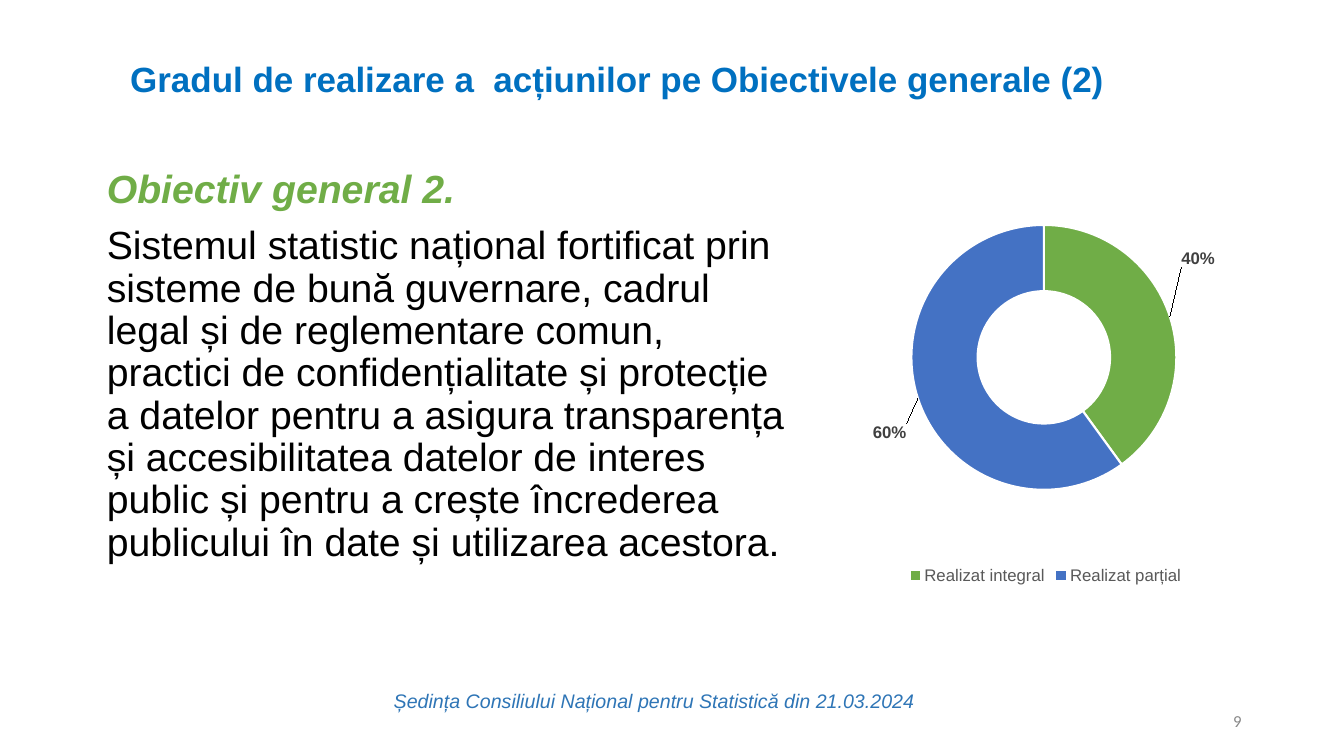
from lxml.etree import SubElement
from pptx import Presentation
from pptx.chart.data import CategoryChartData
from pptx.dml.color import RGBColor
from pptx.enum.chart import XL_CHART_TYPE as ChartType, XL_LEGEND_POSITION as LegendPosition
from pptx.enum.text import MSO_ANCHOR as Anchor, MSO_AUTO_SIZE as AutoSize, PP_ALIGN as Align
from pptx.oxml.ns import qn
from pptx.util import Inches, Pt

SLIDE_W, SLIDE_H = Inches(13.33), Inches(7.5)
COLUMNS, ROWS = 16, 9

GREEN, BLUE, TITLE_BLUE, FOOTER_BLUE = "70AD47", "4472C4", "0070C0", "2E75B6"
BLACK, WHITE, LABEL_GREY, LEGEND_GREY, NUMBER_GREY = "000000", "FFFFFF", "404040", "595959", "888888"

# Category, percentage, slice colour, label offset as shares of the chart
RESULTS = [
    ("Realizat integral", 40, GREEN, (0.14, -0.17)),
    ("Realizat parțial", 60, BLUE, (-0.14, 0.11)),
]
OBJECTIVE = (
    "Sistemul statistic național fortificat prin sisteme de bună guvernare, "
    "cadrul legal și de reglementare comun, practici de confidențialitate și "
    "protecție a datelor pentru a asigura transparența și accesibilitatea "
    "datelor de interes public și pentru a crește încrederea publicului în "
    "date și utilizarea acestora."
)


def color(hex_code):
    return RGBColor.from_string(hex_code)


def area(column, row, columns, rows):
    """Left, top, width and height from grid units."""
    return (int(SLIDE_W * column / COLUMNS), int(SLIDE_H * row / ROWS),
            int(SLIDE_W * columns / COLUMNS), int(SLIDE_H * rows / ROWS))


def style(font, size, hex_code, bold=False, italic=False, face="Arial"):
    font.name, font.size = face, Pt(size)
    font.bold, font.italic = bold, italic
    font.color.rgb = color(hex_code)


def add_run(paragraph, text, *args, **kwargs):
    run = paragraph.add_run()
    run.text = text
    style(run.font, *args, **kwargs)


def prepare(frame, anchor=Anchor.TOP, align=Align.LEFT):
    frame.word_wrap, frame.auto_size = True, AutoSize.NONE
    frame.vertical_anchor = anchor
    frame.paragraphs[0].alignment = align
    return frame


def add_text(slide, place, anchor=Anchor.TOP, align=Align.LEFT):
    return prepare(slide.shapes.add_textbox(*area(*place)).text_frame, anchor, align)


def add_title(slide, text, place):
    title = slide.shapes.title
    title.left, title.top, title.width, title.height = area(*place)
    add_run(prepare(title.text_frame).paragraphs[0], text, 25, TITLE_BLUE, bold=True)


def add_objective(slide, place):
    frame = add_text(slide, place)
    heading, statement = frame.paragraphs[0], frame.add_paragraph()
    for paragraph in (heading, statement):
        paragraph.line_spacing = 0.9
        paragraph._p.get_or_add_pPr().set("marL", str(Inches(0.12)))
    statement.space_before = Pt(10)
    add_run(heading, "Obiectiv general 2.", 28, GREEN, bold=True, italic=True)
    add_run(statement, OBJECTIVE, 28, BLACK)


def fill_layout(layout, **values):
    manual = SubElement(layout, qn("c:manualLayout"))
    for tag, value in values.items():
        SubElement(manual, qn(f"c:{tag}")).set("val", str(value))


def add_results_chart(slide, place):
    data = CategoryChartData(number_format='0"%"')
    data.categories = [name for name, *_ in RESULTS]
    data.add_series("Series 1", [value for _, value, *_ in RESULTS])
    chart = slide.shapes.add_chart(ChartType.DOUGHNUT, *area(*place), data).chart
    chart.has_title = False
    style(chart.font, 10, BLACK)

    # Legend
    chart.has_legend = True
    chart.legend.position = LegendPosition.BOTTOM
    chart.legend.include_in_layout = False
    style(chart.legend.font, 12, LEGEND_GREY)

    # Slices and their labels
    plot = chart.plots[0]
    plot.vary_by_categories = True
    ring = plot.series[0]
    ring.data_labels.show_value = True
    for index, (_, _, slice_color, _) in enumerate(RESULTS):
        point = ring.points[index]
        point.format.fill.solid()
        point.format.fill.fore_color.rgb = color(slice_color)
        point.format.line.color.rgb = color(WHITE)
        point.format.line.width = Pt(1.5)
        style(point.data_label.font, 12, LABEL_GREY, bold=True)

    # Label offsets, ring position and hole
    space = chart.element
    for label, (*_, (dx, dy)) in zip(space.iter(qn("c:dLbl")), RESULTS):
        layout = label.makeelement(qn("c:layout"))
        label.insert(1, layout)
        fill_layout(layout, x=dx, y=dy)
    plot_area = next(space.iter(qn("c:plotArea")))
    for unused in plot_area.findall(qn("c:layout")):
        plot_area.remove(unused)
    layout = plot_area.makeelement(qn("c:layout"))
    plot_area.insert(0, layout)
    fill_layout(layout, layoutTarget="inner", xMode="edge", yMode="edge",
                x=0.185, y=0.09, w=0.621, h=0.67)
    next(space.iter(qn("c:holeSize"))).set("val", "75")


def main():
    deck = Presentation()
    deck.slide_width, deck.slide_height = SLIDE_W, SLIDE_H
    slide = deck.slides.add_slide(deck.slide_layouts[5])

    # Content
    add_title(slide, "Gradul de realizare a  acțiunilor pe Obiectivele generale (2)",
              (1.43, 0.62, 12.4, 0.62))
    add_objective(slide, (1.01, 1.96, 8.58, 5.71))
    add_results_chart(slide, (9.91, 2.22, 5.08, 4.79))

    # Footer and slide number
    footer = add_text(slide, (3.79, 8.14, 8, 0.41), align=Align.CENTER)
    add_run(footer.paragraphs[0],
            "Ședința Consiliului Național pentru Statistică din 21.03.2024",
            14, FOOTER_BLUE, italic=True)
    number = add_text(slide, (11.3, 8.34, 3.6, 0.48), Anchor.MIDDLE, Align.RIGHT)
    add_run(number.paragraphs[0], "9", 12, NUMBER_GREY, face="Calibri")

    deck.save("out.pptx")


if __name__ == "__main__":
    main()
